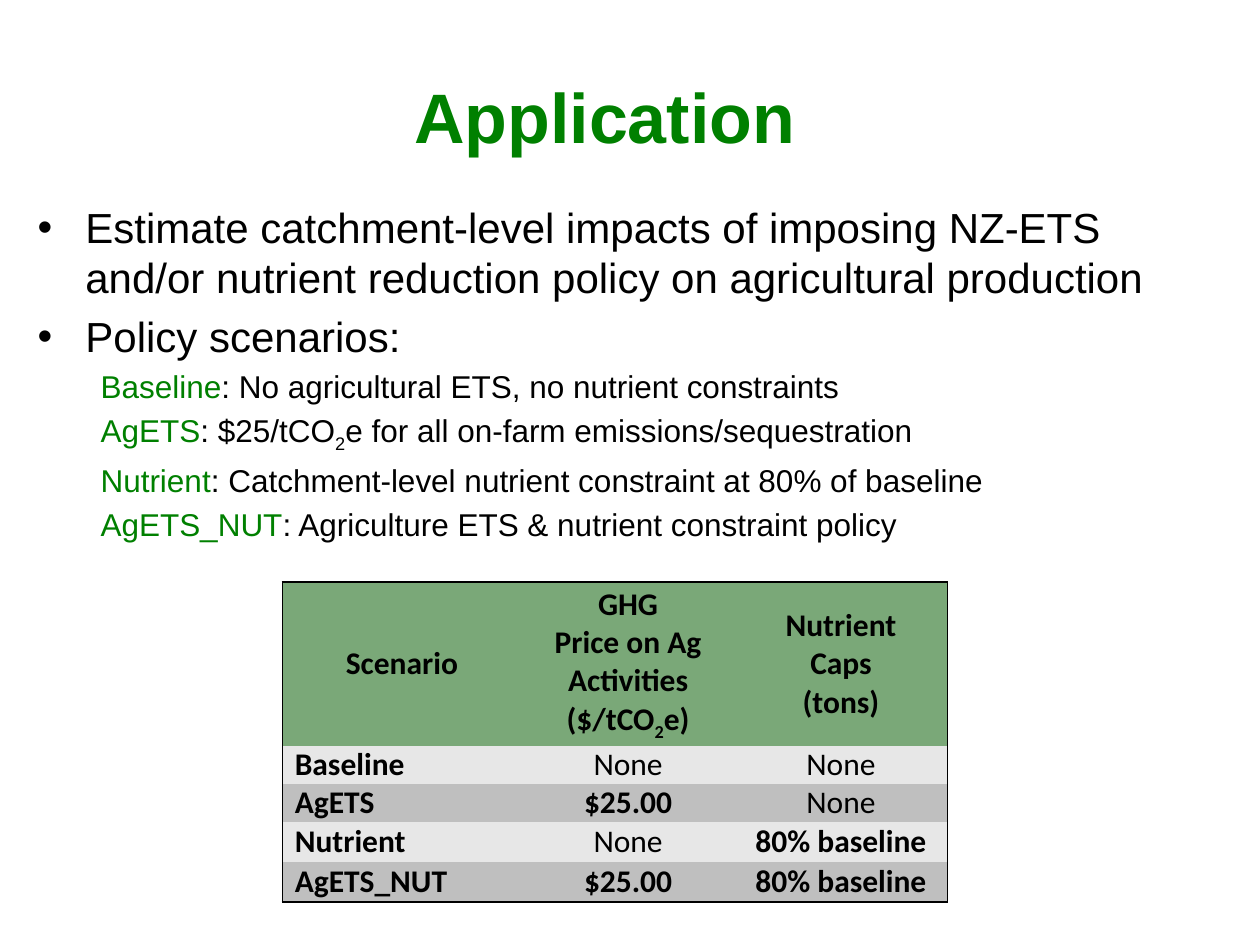
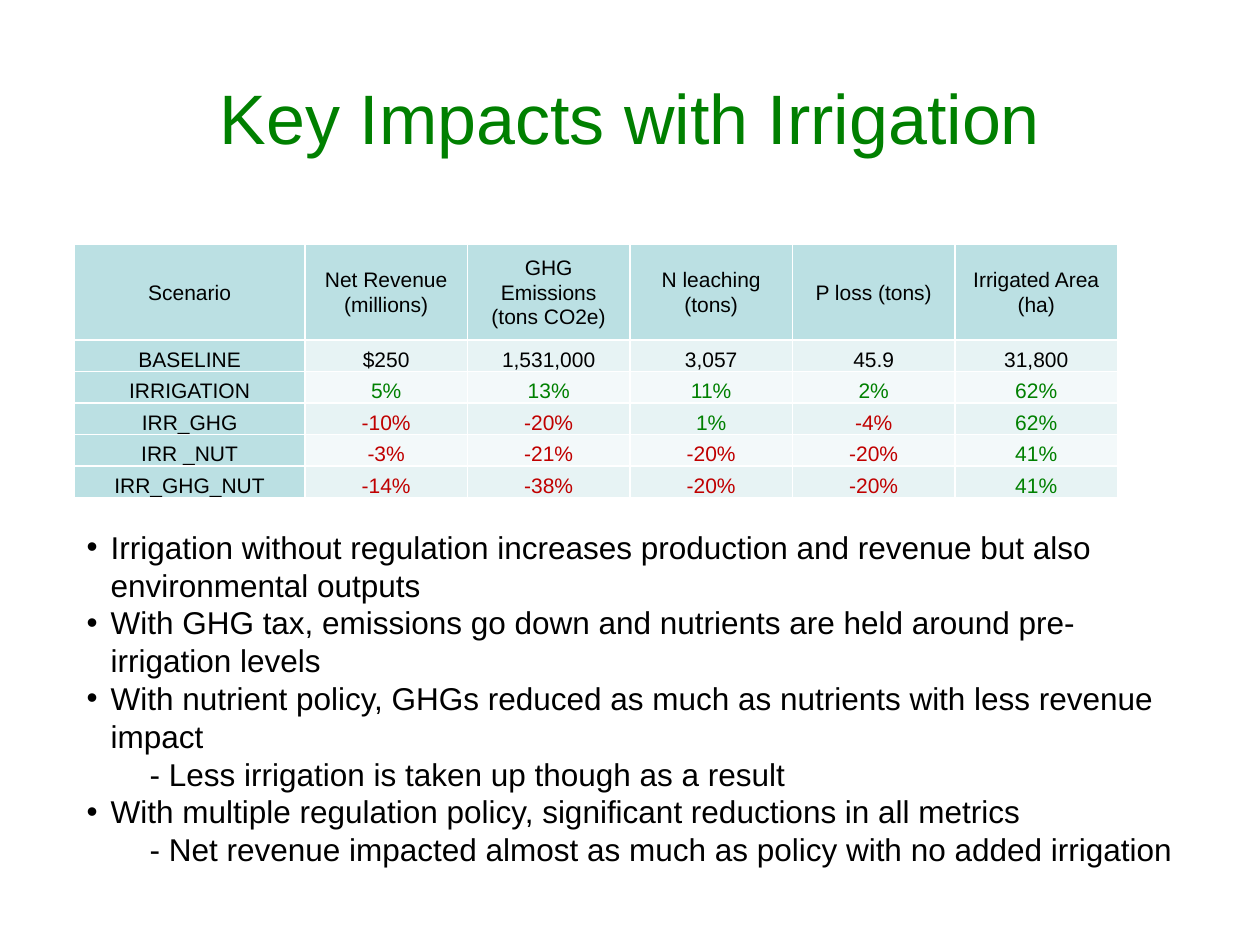
import pptx
import pptx.util
from lxml import etree
from pptx.dml.color import RGBColor
from pptx.enum.text import MSO_ANCHOR, PP_ALIGN
from pptx.oxml.ns import qn
from pptx.util import Inches, Pt

COLORS = {
    "black": "000000", "white": "FFFFFF", "green": "008000", "red": "C00000",
    "scenario_header": "7AA878", "scenario_odd": "E7E7E7", "scenario_even": "BFBFBF",
    "impact_header": "BBE0E3", "impact_odd": "E7F3F4", "impact_even": "F3F9FA",
}

# In a tuple of pieces, every second piece is a subscript.
POLICY_GOALS = [
    "Estimate catchment-level impacts of imposing NZ-ETS and/or nutrient "
    "reduction policy on agricultural production",
    "Policy scenarios:",
]
POLICY_SCENARIOS = [
    ("Baseline", (": No agricultural ETS, no nutrient constraints",)),
    ("AgETS", (": $25/tCO", "2", "e for all on-farm emissions/sequestration")),
    ("Nutrient", (": Catchment-level nutrient constraint at 80% of baseline",)),
    ("AgETS_NUT", (": Agriculture ETS & nutrient constraint policy",)),
]

# Each cell is a list of paragraphs.
SCENARIO_HEADER = [
    ["Scenario"],
    ["GHG", "Price on Ag Activities", ("($/tCO", "2", "e)")],
    ["Nutrient", "Caps", "(tons)"],
]
SCENARIO_ROWS = [
    ["Baseline", "None", "None"],
    ["AgETS", "$25.00", "None"],
    ["Nutrient", "None", "80% baseline"],
    ["AgETS_NUT", "$25.00", "80% baseline"],
]

IMPACT_HEADER = [
    ["Scenario"], ["Net Revenue", "(millions)"], ["GHG Emissions (tons CO2e)"],
    ["N leaching (tons)"], ["P loss (tons)"], ["Irrigated Area", "(ha)"],
]
IMPACT_ROWS = [
    ["BASELINE", "$250", "1,531,000", "3,057", "45.9", "31,800"],
    ["IRRIGATION", "5%", "13%", "11%", "2%", "62%"],
    ["IRR_GHG", "-10%", "-20%", "1%", "-4%", "62%"],
    ["IRR _NUT", "-3%", "-21%", "-20%", "-20%", "41%"],
    ["IRR_GHG_NUT", "-14%", "-38%", "-20%", "-20%", "41%"],
]

# (level, text)
FINDINGS = [
    (0, "Irrigation without regulation increases production and revenue but also "
        "environmental outputs"),
    (0, "With GHG tax, emissions go down and nutrients are held around "
        "pre-irrigation levels"),
    (0, "With nutrient policy, GHGs reduced as much as nutrients with less revenue impact"),
    (1, "- Less irrigation is taken up though as a result"),
    (0, "With multiple regulation policy, significant reductions in all metrics"),
    (1, "- Net revenue impacted almost as much as policy with no added irrigation"),
]


def rgb(color):
    return RGBColor.from_string(COLORS[color])


def set_font(paragraph, size, color="black", bold=False, name="Arial"):
    font = paragraph.font
    font.name, font.size, font.bold = name, Pt(size), bold
    font.color.rgb = rgb(color)


def set_indent(paragraph, left, first_line=0, bullet=False):
    properties = paragraph._p.get_or_add_pPr()
    properties.set("marL", str(Inches(left)))
    properties.set("indent", str(Inches(first_line)))
    if bullet:
        etree.SubElement(properties, qn("a:buFont")).set("typeface", "Arial")
        etree.SubElement(properties, qn("a:buChar")).set("char", "•")


def add_pieces(paragraph, text):
    pieces = (text,) if isinstance(text, str) else text
    for index, piece in enumerate(pieces):
        run = paragraph.add_run()
        run.text = piece
        if index % 2:
            run._r.get_or_add_rPr().set("baseline", "-25000")


def next_paragraph(frame):
    """Return the empty first paragraph, or a new one after filled ones."""
    first = frame.paragraphs[0]
    return frame.add_paragraph() if first.runs else first


def add_text_frame(slide, left, top, width, height):
    box = slide.shapes.add_textbox(
        Inches(left), Inches(top), Inches(width), Inches(height))
    box.text_frame.word_wrap = True
    return box.text_frame


def add_title(slide, text, left, top, width, bold=False):
    frame = add_text_frame(slide, left, top, width, 1.25)
    frame.vertical_anchor = MSO_ANCHOR.MIDDLE
    paragraph = frame.paragraphs[0]
    paragraph.alignment = PP_ALIGN.CENTER
    add_pieces(paragraph, text)
    set_font(paragraph, 40, "green", bold)


def add_table(slide, left, top, column_widths, row_heights):
    table = slide.shapes.add_table(
        len(row_heights), len(column_widths), Inches(left), Inches(top),
        Inches(sum(column_widths)), Inches(sum(row_heights))).table
    table.first_row = table.horz_banding = False
    for column, width in zip(table.columns, column_widths):
        column.width = Inches(width)
    for row, height in zip(table.rows, row_heights):
        row.height = Inches(height)
    return table


def format_cell(cell, fill, borders, side_margin, anchor):
    """Borders map the sides L, R, T, B to (color, points); other sides get no line."""
    cell.margin_left = cell.margin_right = Inches(side_margin)
    cell.margin_top = cell.margin_bottom = 0
    cell.vertical_anchor = anchor
    properties = cell._tc.get_or_add_tcPr()
    for side in "LRTB":
        line = etree.SubElement(properties, qn(f"a:ln{side}"))
        if side in borders:
            color, points = borders[side]
            line.set("w", str(Pt(points)))
            solid = etree.SubElement(line, qn("a:solidFill"))
            etree.SubElement(solid, qn("a:srgbClr")).set("val", COLORS[color])
        else:
            etree.SubElement(line, qn("a:noFill"))
    cell.fill.solid()
    cell.fill.fore_color.rgb = rgb(fill)


def band(prefix, row):
    return f"{prefix}_odd" if row % 2 else f"{prefix}_even"


def add_scenario_table(slide):
    rows = [SCENARIO_HEADER] + [[[text] for text in row] for row in SCENARIO_ROWS]
    table = add_table(slide, 2.24, 4.62, [1.9, 1.69, 1.69], [1.3, 0.29, 0.29, 0.32, 0.32])
    for r, row in enumerate(rows):
        for c, texts in enumerate(row):
            edges = {"L": c == 0, "R": c == len(row) - 1,
                     "T": r == 0, "B": r == len(rows) - 1}
            borders = {side: ("black", 1) for side, outer in edges.items() if outer}
            cell = table.cell(r, c)
            fill = band("scenario", r) if r else "scenario_header"
            format_cell(cell, fill, borders, 0, MSO_ANCHOR.MIDDLE)
            for text in texts:
                paragraph = next_paragraph(cell.text_frame)
                add_pieces(paragraph, text)
                if r and c == 0:
                    set_indent(paragraph, 0.1)
                else:
                    paragraph.alignment = PP_ALIGN.CENTER
                set_font(paragraph, 18, bold=text != "None", name="Calibri")


def impact_color(text):
    if not text.endswith("%"):
        return "black"
    return "red" if text.startswith("-") else "green"


def add_impact_table(slide):
    rows = [IMPACT_HEADER] + [[[text] for text in row] for row in IMPACT_ROWS]
    table = add_table(slide, 0.59, 1.94, [1.83] + [1.29] * 5, [0.76] + [0.25] * 5)
    for r, row in enumerate(rows):
        for c, texts in enumerate(row):
            cell = table.cell(r, c)
            fill = band("impact", r) if r and c else "impact_header"
            anchor = MSO_ANCHOR.BOTTOM if r else MSO_ANCHOR.MIDDLE
            format_cell(cell, fill, dict.fromkeys("LRTB", ("white", 1)), 0.07, anchor)
            for text in texts:
                paragraph = next_paragraph(cell.text_frame)
                add_pieces(paragraph, text)
                paragraph.alignment = PP_ALIGN.CENTER
                paragraph.line_spacing = Pt(14)
                set_font(paragraph, 12, impact_color(text))


def build_application(slide):
    add_title(slide, "Application", -0.2, 0.29, 10, bold=True)
    frame = add_text_frame(slide, 0.2, 1.55, 9.24, 2.28)
    for index, goal in enumerate(POLICY_GOALS):
        paragraph = next_paragraph(frame)
        add_pieces(paragraph, goal)
        set_indent(paragraph, 0.38, -0.38, bullet=True)
        if index:
            paragraph.space_before = Pt(4.8)
        set_font(paragraph, 24)
    for name, description in POLICY_SCENARIOS:
        paragraph = next_paragraph(frame)
        paragraph.level = 1
        add_pieces(paragraph, name)
        paragraph.runs[0].font.color.rgb = rgb("green")
        add_pieces(paragraph, description)
        set_indent(paragraph, 0.81, -0.31)
        paragraph.space_before = Pt(3.6)
        set_font(paragraph, 18)
    add_scenario_table(slide)


def build_key_impacts(slide):
    add_title(slide, "Key Impacts with Irrigation", 0.5, 0.3, 9)
    add_impact_table(slide)
    frame = add_text_frame(slide, 0.59, 4.14, 8.9, 3.13)
    for level, finding in FINDINGS:
        paragraph = next_paragraph(frame)
        paragraph.level = level
        add_pieces(paragraph, finding)
        if level:
            set_indent(paragraph, 0.5)
        else:
            set_indent(paragraph, 0.19, -0.19, bullet=True)
        set_font(paragraph, 18)


def main():
    presentation = pptx.Presentation()
    presentation.slide_width, presentation.slide_height = Inches(10), Inches(7.5)
    for build in (build_application, build_key_impacts):
        build(presentation.slides.add_slide(presentation.slide_layouts[6]))
    presentation.save("out.pptx")


if __name__ == "__main__":
    main()
